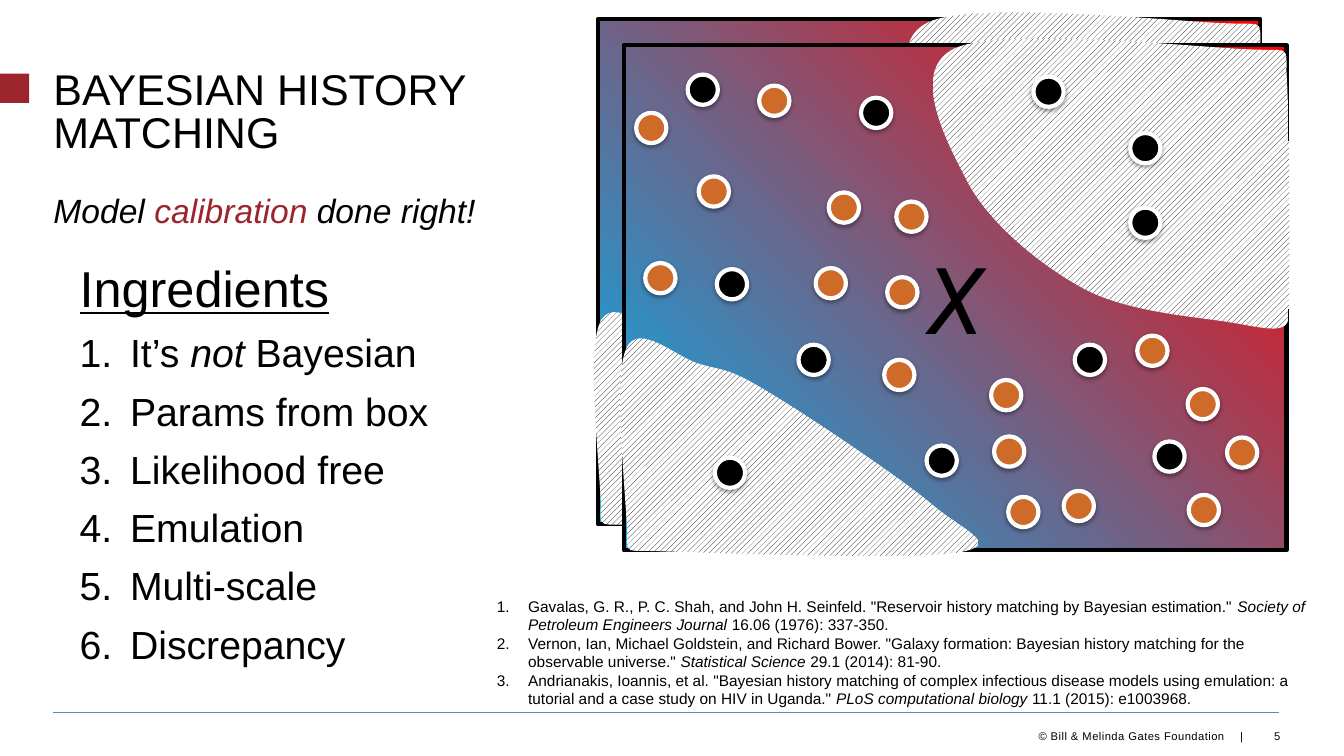
from dataclasses import dataclass

from lxml.etree import SubElement
from pptx import Presentation
from pptx.dml.color import RGBColor
from pptx.enum.dml import MSO_PATTERN
from pptx.enum.shapes import MSO_CONNECTOR, MSO_SHAPE
from pptx.enum.text import MSO_ANCHOR, MSO_AUTO_SIZE, PP_ALIGN
from pptx.oxml.ns import qn
from pptx.util import Inches, Pt

BLACK, WHITE, RED, ORANGE = "000000", "FFFFFF", "9B242D", "CE6B29"
PANEL_SHIFT = 0.26
DOT_SIZE = 0.3


@dataclass(frozen=True)
class Span:
    text: str
    size: float
    color: str = BLACK
    italic: bool = False
    underline: bool = False
    font: str = "Arial"


@dataclass(frozen=True)
class DotGroup:
    color: str
    corners: tuple[tuple[float, float], ...]


@dataclass(frozen=True)
class Region:
    """Closed outline of cubic curves: a start, then three points per curve."""
    box: tuple[float, float, float, float]
    half_turn: bool
    start: tuple[float, float]
    curves: tuple[tuple[float, float, float, float, float, float], ...]


REGIONS = (
    Region((9.25, 0.38, 3.54, 2.88), False, (9.47, 0.48), (
        (9, 0.7, 9.4, 1.43, 9.61, 1.83),
        (9.83, 2.23, 10.33, 2.64, 10.76, 2.87),
        (11.18, 3.09, 11.82, 3.14, 12.15, 3.19),
        (12.49, 3.24, 12.78, 3.34, 12.78, 3.14),
        (12.79, 2.95, 12.8, 1.37, 12.76, 0.71),
        (12.76, 0.44, 12.79, 0.51, 12.4, 0.49),
        (12, 0.48, 9.93, 0.26, 9.47, 0.48))),
    Region((6.15, 3.36, 3.56, 2.16), True, (9.51, 5.48), (
        (9.95, 5.4, 9.56, 5.27, 9.24, 5),
        (8.92, 4.73, 7.98, 4.1, 7.59, 3.87),
        (7.21, 3.64, 7.17, 3.68, 6.94, 3.61),
        (6.71, 3.55, 6.33, 3.18, 6.21, 3.46),
        (6.09, 3.73, 6.18, 4.59, 6.22, 5.25),
        (6.21, 5.52, 6.19, 5.45, 6.58, 5.47),
        (6.97, 5.48, 9.06, 5.56, 9.51, 5.48))),
)

PANEL_DOTS = DotGroup(BLACK, (
    (6.82, 0.74), (8.54, 0.97), (7.11, 2.67), (10.25, 0.76), (10.66, 3.42), (9.19, 4.42),
    (11.45, 4.38), (11.21, 2.06), (7.92, 3.42), (7.09, 4.54), (11.21, 1.32)))
NEW_DOTS = DotGroup(ORANGE, (
    (6.93, 1.75), (8.22, 1.91), (8.77, 3.57), (11.78, 3.86), (10.55, 4.87), (9.83, 3.77),
    (8.09, 2.66), (7.53, 0.85), (8.89, 2), (11.79, 4.91), (9.86, 4.33), (11.28, 3.33),
    (6.31, 1.12), (6.4, 2.61), (8.8, 2.75), (10, 4.93), (12.17, 4.34)))

INGREDIENTS = (("It’s ", "not", " Bayesian"), ("Params from box",), ("Likelihood free",),
               ("Emulation",), ("Multi-scale",), ("Discrepancy",))

REFERENCES = (
    ("Gavalas, G. R., P. C. Shah, and John H. Seinfeld. \"Reservoir history matching by "
     "Bayesian estimation.\" ", "Society of Petroleum Engineers Journal",
     " 16.06 (1976): 337-350."),
    ("Vernon, Ian, Michael Goldstein, and Richard Bower. \"Galaxy formation: Bayesian history "
     "matching for the observable universe.\" ", "Statistical Science",
     " 29.1 (2014): 81-90."),
    ("Andrianakis, Ioannis, et al. \"Bayesian history matching of complex infectious disease "
     "models using emulation: a tutorial and a case study on HIV in Uganda.\" ",
     "PLoS computational biology", " 11.1 (2015): e1003968."),
)


def rgb(color: str) -> RGBColor:
    return RGBColor.from_string(color)


def place(shape, left: float, top: float, width: float, height: float) -> None:
    shape.left, shape.top = Inches(left), Inches(top)
    shape.width, shape.height = Inches(width), Inches(height)


def set_frame(shape, inset: float, anchor=MSO_ANCHOR.TOP):
    frame = shape.text_frame
    frame.word_wrap = True
    frame.auto_size = MSO_AUTO_SIZE.NONE
    frame.vertical_anchor = anchor
    frame.margin_left = frame.margin_right = Inches(inset)
    frame.margin_top = frame.margin_bottom = Inches(inset)
    return frame


def add_paragraph(frame, spans: list[Span], before: float = 0, hanging: float = 0,
                  align=PP_ALIGN.LEFT):
    """Fill the next paragraph; a hanging indent makes it numbered."""
    first = not frame.paragraphs[0].runs
    para = frame.paragraphs[0] if first else frame.add_paragraph()
    para.alignment = align
    para.space_before = Pt(0 if first else before)
    properties = para._p.get_or_add_pPr()
    properties.set("marL", str(Inches(hanging)))
    properties.set("indent", str(-Inches(hanging)))
    if hanging:
        SubElement(properties, qn("a:buFont"), typeface="+mj-lt")
        SubElement(properties, qn("a:buAutoNum"), type="arabicPeriod")
    else:
        SubElement(properties, qn("a:buNone"))
    for span in spans:
        run = para.add_run()
        run.text = span.text
        run.font.name, run.font.size = span.font, Pt(span.size)
        run.font.italic, run.font.underline = span.italic, span.underline
        run.font.color.rgb = rgb(span.color)
    return para


def alternate_italic(parts: tuple[str, ...], size: float) -> list[Span]:
    return [Span(part, size, italic=index % 2 == 1) for index, part in enumerate(parts)]


def add_panel(slide, shift: float) -> None:
    """Draw one gradient panel with its X, hatched regions and black dots."""
    panel = slide.shapes.add_shape(MSO_SHAPE.RECTANGLE, Inches(6.19 - shift),
                                   Inches(0.45 - shift), Inches(6.57), Inches(5.01))
    panel.shadow.inherit = False
    panel.fill.gradient()
    panel.fill.gradient_angle = 45
    for stop, color in zip(panel.fill.gradient_stops, ("00B0F0", "FF0000")):
        stop.color.rgb = rgb(color)
    panel.line.color.rgb, panel.line.width = rgb(BLACK), Pt(3)
    add_paragraph(set_frame(panel, 0.1, MSO_ANCHOR.MIDDLE),
                  [Span("X", 66, italic=True, font="Roboto")], align=PP_ALIGN.CENTER)
    for region in REGIONS:
        add_region(slide, region, shift)
    add_dots(slide, PANEL_DOTS, shift)


def add_region(slide, region: Region, shift: float) -> None:
    left, top, width, height = region.box
    builder = slide.shapes.build_freeform(0, 0)
    builder.add_line_segments([(Inches(width), 0), (Inches(width), Inches(height))])
    outline = builder.convert_to_shape()
    place(outline, left - shift, top - shift, width, height)
    outline.rotation = 180 if region.half_turn else 0
    outline.shadow.inherit = False
    outline.fill.patterned()
    outline.fill.pattern = MSO_PATTERN.WIDE_UPWARD_DIAGONAL
    outline.fill.fore_color.rgb, outline.fill.back_color.rgb = rgb(BLACK), rgb(WHITE)
    outline.line.fill.background()

    track = next(outline._element.iter(qn("a:path")))
    for segment in list(track):
        track.remove(segment)

    def add_point(parent, x: float, y: float) -> None:
        x, y = x - left, y - top
        if region.half_turn:
            x, y = width - x, height - y
        SubElement(parent, qn("a:pt"), x=str(Inches(x)), y=str(Inches(y)))

    add_point(SubElement(track, qn("a:moveTo")), *region.start)
    for curve in region.curves:
        bend = SubElement(track, qn("a:cubicBezTo"))
        for x, y in zip(curve[::2], curve[1::2]):
            add_point(bend, x, y)
    SubElement(track, qn("a:close"))


def add_dots(slide, group: DotGroup, shift: float = 0) -> None:
    for left, top in group.corners:
        dot = slide.shapes.add_shape(MSO_SHAPE.OVAL, Inches(left - shift), Inches(top - shift),
                                     Inches(DOT_SIZE), Inches(DOT_SIZE))
        dot.fill.solid()
        dot.fill.fore_color.rgb = rgb(group.color)
        dot.line.color.rgb, dot.line.width = rgb(WHITE), Pt(3)
        effects = SubElement(dot._element.spPr, qn("a:effectLst"))
        shadow = SubElement(effects, qn("a:outerShdw"), blurRad=str(Pt(3.1)),
                            dist=str(Pt(1.6)), dir="5400000", rotWithShape="0")
        shade = SubElement(shadow, qn("a:srgbClr"), val=BLACK)
        SubElement(shade, qn("a:alpha"), val="38000")


def add_text_box(slide, left: float, top: float, width: float, height: float):
    return slide.shapes.add_textbox(Inches(left), Inches(top), Inches(width), Inches(height))


def add_footer(slide) -> None:
    rule = slide.shapes.add_connector(MSO_CONNECTOR.STRAIGHT, Inches(0.53), Inches(7.07),
                                      Inches(12.69), Inches(7.07))
    rule.line.color.rgb, rule.line.width = rgb("5393AB"), Pt(0.5)
    SubElement(rule._element.spPr, qn("a:effectLst"))
    frame = set_frame(add_text_box(slide, 10.3, 7.14, 2.12, 0.23), 0, MSO_ANCHOR.BOTTOM)
    para = add_paragraph(frame, [Span("© Bill & Melinda Gates Foundation\t|", 8)])
    tabs = SubElement(para._p.get_or_add_pPr(), qn("a:tabLst"))
    SubElement(tabs, qn("a:tab"), pos=str(Inches(2.05)), algn="l")
    para.runs[0].font._element.set("spc", "30")
    number = set_frame(add_text_box(slide, 12.42, 7.14, 0.28, 0.23), 0, MSO_ANCHOR.BOTTOM)
    add_paragraph(number, [Span("5", 8)], align=PP_ALIGN.RIGHT)


def add_texts(slide) -> None:
    title, tagline, ingredients = slide.placeholders
    place(title, 0.53, 0.71, 4.62, 0.94)
    heading = add_paragraph(set_frame(title, 0), [Span("BAYESIAN HISTORY MATCHING", 30.7)])
    heading.line_spacing = Pt(30.7)
    place(tagline, 0.53, 1.88, 4.62, 4.94)
    add_paragraph(set_frame(tagline, 0), [
        Span("Model ", 24, italic=True), Span("calibration", 24, RED, italic=True),
        Span(" done right!", 24, italic=True)])
    place(ingredients, 0.59, 2.35, 4.04, 4.55)
    frame = set_frame(ingredients, 0.2)
    add_paragraph(frame, [Span("Ingredients", 36, underline=True)])
    for parts in INGREDIENTS:
        add_paragraph(frame, alternate_italic(parts, 28), before=8, hanging=0.5)
    references = add_text_box(slide, 4.83, 5.87, 8.41, 1.21).text_frame
    references.word_wrap = True
    references.auto_size = MSO_AUTO_SIZE.SHAPE_TO_FIT_TEXT
    for parts in REFERENCES:
        add_paragraph(references, alternate_italic(parts, 11), hanging=0.31)


def main() -> None:
    deck = Presentation()
    deck.slide_width, deck.slide_height = Inches(13.33), Inches(7.5)
    slide = deck.slides.add_slide(deck.slide_layouts.get_by_name("Two Content"))
    marker = slide.shapes.add_shape(MSO_SHAPE.RECTANGLE, 0, Inches(0.73), Inches(0.29), Inches(0.29))
    marker.shadow.inherit = False
    marker.fill.solid()
    marker.fill.fore_color.rgb = rgb(RED)
    marker.line.fill.background()
    add_footer(slide)
    add_texts(slide)
    for shift in (PANEL_SHIFT, 0):
        add_panel(slide, shift)
    add_dots(slide, NEW_DOTS)
    deck.save("out.pptx")


if __name__ == "__main__":
    main()
